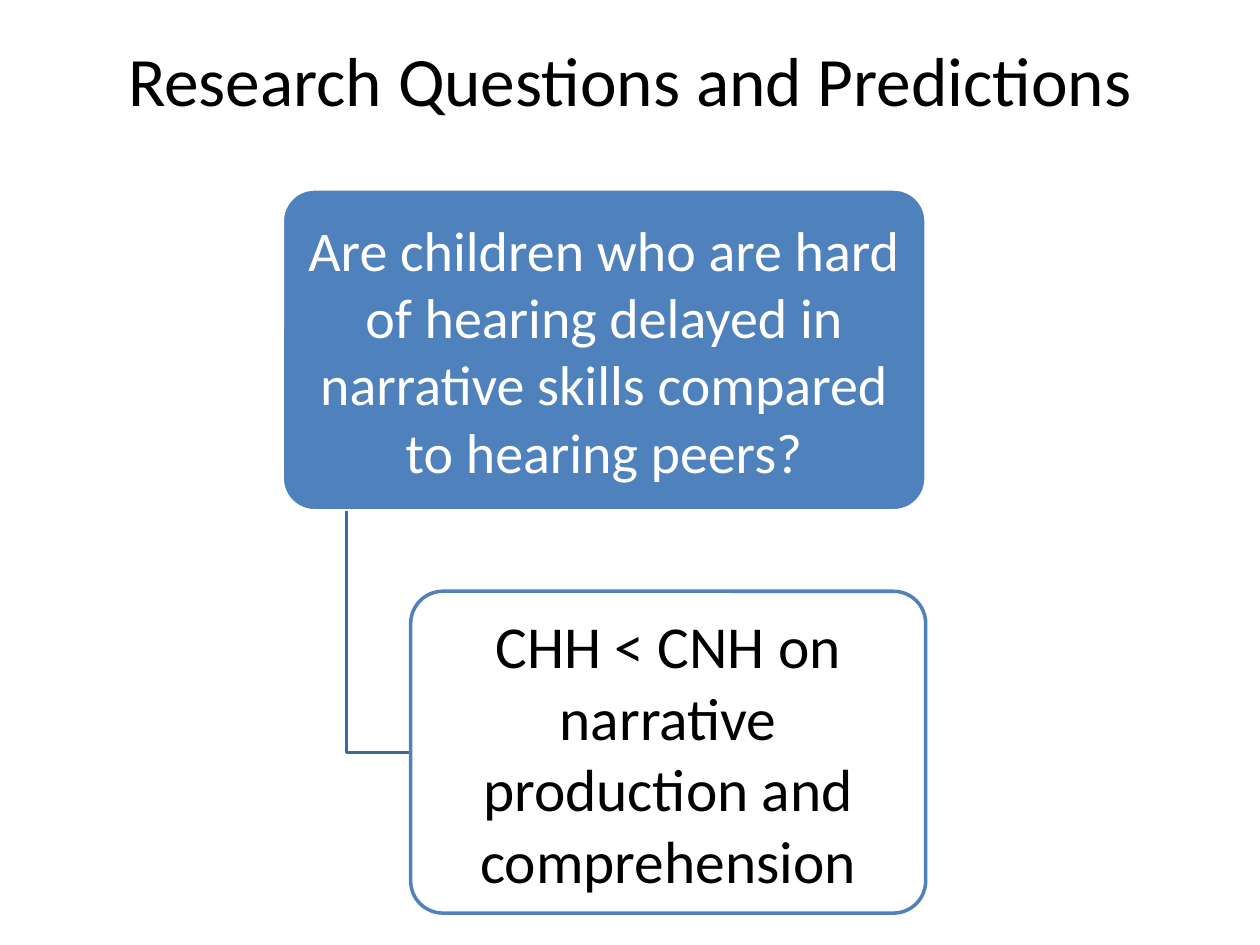
from lxml import etree
from pptx import Presentation
from pptx.dml.color import RGBColor
from pptx.enum.shapes import MSO_SHAPE as Shape
from pptx.enum.text import MSO_ANCHOR as Anchor, PP_ALIGN as Align
from pptx.oxml.ns import qn
from pptx.util import Pt

# Content
HEADING = "Research Questions and Predictions"
QUESTION = dict(
    text="Are children who are hard of hearing delayed in narrative skills "
         "compared to hearing peers?",
    box=(161.3, 108, 367.9, 183.9), size=32,
    fill="4F81BD", line="FFFFFF", color="FFFFFF")
PREDICTION = dict(
    text="CHH < CNH on narrative production and comprehension",
    box=(234.7, 337.9, 294.3, 183.9), size=34,
    fill="FFFFFF", line="4F81BD", color="000000", opacity=90)
LINK_COLOR = "3F6797"
LINE_WIDTH = 2
INDENT = 0.1  # link start, as a share of the question's width


def rgb(hex_color):
    return RGBColor.from_string(hex_color)


def write(frame, text, size, color):
    frame.word_wrap = True
    frame.vertical_anchor = Anchor.MIDDLE
    paragraph = frame.paragraphs[0]
    paragraph.text = text
    paragraph.alignment = Align.CENTER
    paragraph.font.name = "Calibri"
    paragraph.font.size = Pt(size)
    paragraph.font.color.rgb = rgb(color)


def outline(shape, color):
    shape.shadow.inherit = False
    shape.line.color.rgb = rgb(color)
    shape.line.width = Pt(LINE_WIDTH)


def add_card(shapes, text, box, size, fill, line, color, opacity=100):
    card = shapes.add_shape(Shape.ROUNDED_RECTANGLE, *map(Pt, box))
    card.adjustments[0] = 0.1
    card.fill.solid()
    card.fill.fore_color.rgb = rgb(fill)
    if opacity < 100:
        fill_color = card.fill._xPr.find(qn("a:solidFill"))[0]
        etree.SubElement(fill_color, qn("a:alpha"), val=str(opacity * 1000))
    outline(card, line)
    frame = card.text_frame
    frame.margin_left = frame.margin_right = Pt(4.8)
    frame.margin_top = frame.margin_bottom = Pt(3.2)
    write(frame, text, size, color)


def add_link(shapes, parent_box, child_box):
    left, top, width, height = parent_box
    child_left, child_top, _, child_height = child_box
    x, bottom = Pt(left + width * INDENT), Pt(top + height)
    middle = Pt(child_top + child_height / 2)
    builder = shapes.build_freeform(x, bottom)
    builder.add_line_segments([(x, middle), (Pt(child_left), middle)],
                              close=False)
    link = builder.convert_to_shape()
    link.fill.background()
    outline(link, LINK_COLOR)


def main():
    deck = Presentation()
    deck.slide_width, deck.slide_height = Pt(720), Pt(540)
    slide = deck.slides.add_slide(deck.slide_layouts[5])

    # Title
    title = slide.shapes.title
    title.left, title.top, title.width, title.height = map(Pt, (36, 0, 648, 90))
    write(title.text_frame, HEADING, 39.6, "000000")

    # Question, the link, and its prediction on top
    add_card(slide.shapes, **QUESTION)
    add_link(slide.shapes, QUESTION["box"], PREDICTION["box"])
    add_card(slide.shapes, **PREDICTION)

    deck.save("out.pptx")


if __name__ == "__main__":
    main()
